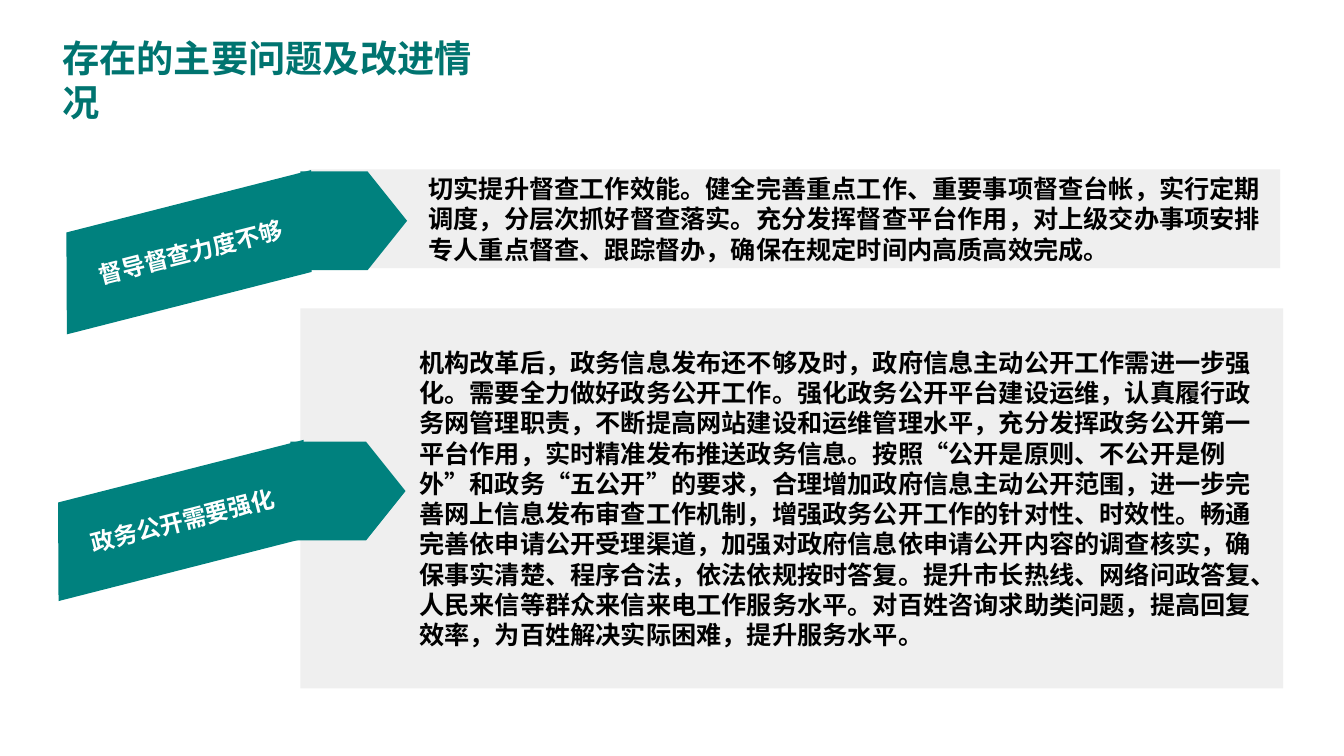
from pptx import Presentation
from pptx import util as u
from pptx.dml import color
from pptx.enum import shapes, text
from pptx.oxml import ns
from lxml import etree

FONT = "Noto Sans CJK SC"
TEAL = "00817E"
GREY = "EFEFEF"
SHAPE = shapes.MSO_SHAPE

TITLE = "存在的主要问题及改进情况"
SUPERVISION = (
    "切实提升督查工作效能。健全完善重点工作、重要事项督查台帐，实行定期调度，分层次抓好督查落实。"
    "充分发挥督查平台作用，对上级交办事项安排专人重点督查、跟踪督办，确保在规定时间内高质高效完成。"
)
OPENNESS = (
    "机构改革后，政务信息发布还不够及时，政府信息主动公开工作需进一步强化。需要全力做好政务公开工作。"
    "强化政务公开平台建设运维，认真履行政务网管理职责，不断提高网站建设和运维管理水平，"
    "充分发挥政务公开第一平台作用，实时精准发布推送政务信息。"
    "按照“公开是原则、不公开是例外”和政务“五公开”的要求，合理增加政府信息主动公开范围，"
    "进一步完善网上信息发布审查工作机制，增强政务公开工作的针对性、时效性。"
    "畅通完善依申请公开受理渠道，加强对政府信息依申请公开内容的调查核实，"
    "确保事实清楚、程序合法，依法依规按时答复。"
    "提升市长热线、网络问政答复、人民来信等群众来信来电工作服务水平。"
    "对百姓咨询求助类问题，提高回复效率，为百姓解决实际困难，提升服务水平。"
)


def rgb(value):
    return color.RGBColor.from_string(value)


def lengths(place):
    return [u.Cm(value) for value in place]


def write(shape, words, size, tint, align=text.PP_ALIGN.LEFT):
    frame = shape.text_frame
    frame.word_wrap = True
    para = frame.paragraphs[0]
    para.text = words
    para.alignment = align
    font = para.font
    font.size = u.Pt(size)
    font.bold = True
    font.color.rgb = rgb(tint)
    font.name = FONT
    defaults = para._p.pPr.find(ns.qn("a:defRPr"))
    etree.SubElement(defaults, ns.qn("a:ea")).set("typeface", FONT)


def add_block(page, kind, place, fill):
    block = page.shapes.add_shape(kind, *lengths(place))
    block.shadow.inherit = False
    block.fill.solid()
    block.fill.fore_color.rgb = rgb(fill)
    block.line.fill.background()
    return block


def add_title(page, words):
    box = page.shapes.add_textbox(*lengths((1.32, 0.76, 11.7, 1.4)))
    write(box, words, 26.6, "007470")


def add_panel(page, place, words):
    panel = add_block(page, SHAPE.RECTANGLE, place, GREY)
    panel.text_frame.margin_left = u.Cm(3)
    panel.text_frame.vertical_anchor = text.MSO_ANCHOR.MIDDLE
    write(panel, words, 18, "000000")


def add_ribbon(page, band_place, arrow_place, words):
    band = add_block(page, SHAPE.PARALLELOGRAM, band_place, TEAL)
    band.rotation = 345.7
    band.text_frame.vertical_anchor = text.MSO_ANCHOR.MIDDLE
    write(band, words, 16.8, "FFFFFF", text.PP_ALIGN.RIGHT)
    arrow = add_block(page, SHAPE.PENTAGON, arrow_place, TEAL)
    arrow.adjustments[0] = 0.4


def main():
    deck = Presentation()
    deck.slide_width = u.Cm(33.87)
    deck.slide_height = u.Cm(19.05)
    page = deck.slides.add_slide(deck.slide_layouts[6])
    add_title(page, TITLE)
    add_panel(page, (7.57, 7.77, 24.77, 9.58), OPENNESS)
    add_panel(page, (7.8, 4.27, 24.46, 2.49), SUPERVISION)
    add_ribbon(page, (1.27, 5.11, 6.99, 2.49), (7.57, 4.32, 2.69, 2.49), "督导督查力度不够")
    add_ribbon(page, (1.07, 11.91, 6.99, 2.41), (7.32, 11.13, 2.9, 2.49), "政务公开需要强化")
    deck.save("out.pptx")


if __name__ == "__main__":
    main()
